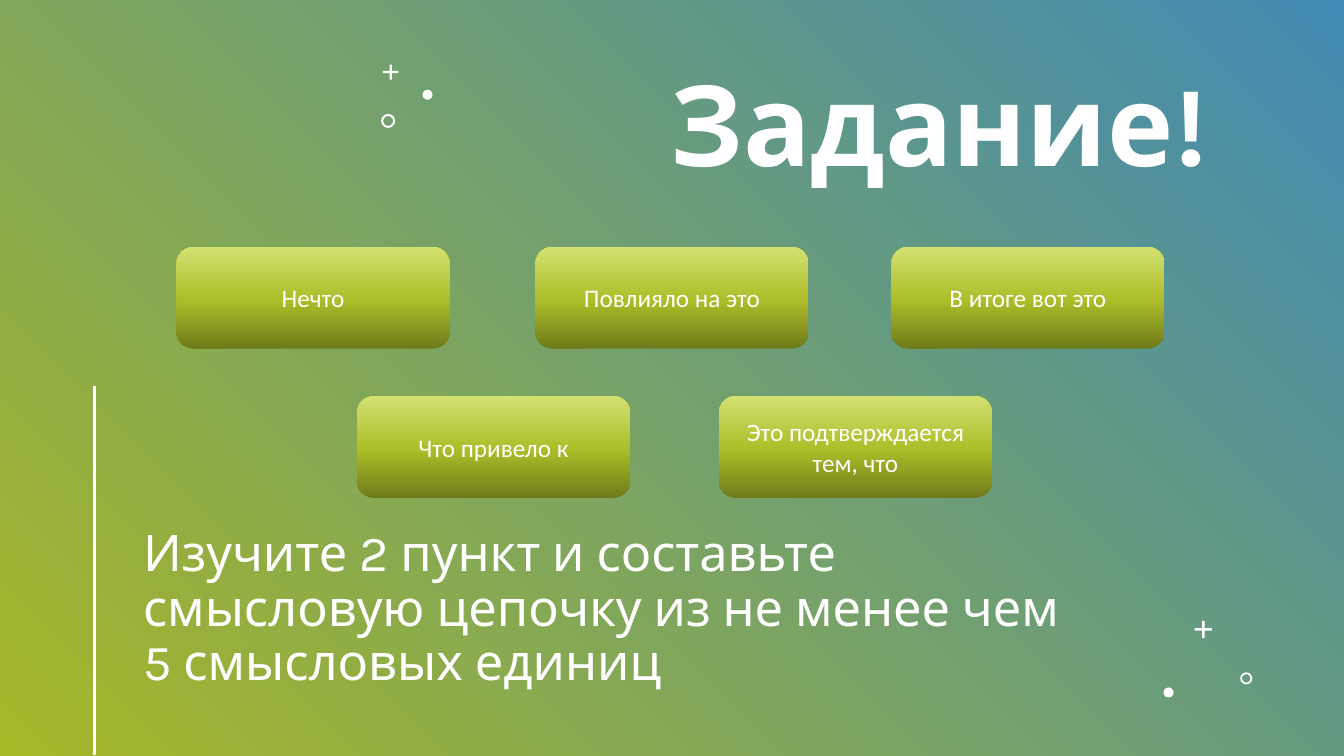
"""Builds the task slide with five linking phrases."""
from lxml.etree import SubElement
from pptx import Presentation
from pptx.dml.color import RGBColor
from pptx.enum.shapes import MSO_CONNECTOR, MSO_SHAPE
from pptx.enum.text import MSO_ANCHOR, MSO_AUTO_SIZE, PP_ALIGN
from pptx.oxml.ns import qn
from pptx.util import Inches, Pt

WHITE = "FFFFFF"
BACKDROP = [(0, "418AB3"), (100, "A6B727")]
BUTTON = [(0, "6F7B1A"), (48, "ACBE29"), (100, "D3E171")]


def color(value):
    """Turn a hex string into a colour."""
    return RGBColor.from_string(value)


class TaskSlide:
    """Holds the style and the current slide."""

    def __init__(self, prs):
        """Add a title-only slide."""
        self.s = prs.slides.add_slide(prs.slide_layouts[5])
        self.heading = {"name": "Karla", "size": Pt(80), "bold": True}
        self.body = {"name": "Karla", "size": Pt(36), "bold": False}
        self.label = {"name": "Calibri", "size": Pt(18), "bold": False}

    def fill_text(self, sp, text, font, align, anchor, spacing=None):
        """Put one formatted paragraph into a shape."""
        tf = sp.text_frame
        frame = {"word_wrap": True, "auto_size": MSO_AUTO_SIZE.NONE, "vertical_anchor": anchor}
        for key, value in frame.items():
            setattr(tf, key, value)
        p = tf.paragraphs[0]
        p.alignment, p.line_spacing = align, spacing
        r = p.add_run()
        r.text = text
        for key, value in font.items():
            setattr(r.font, key, value)
        r.font.color.rgb = color(WHITE)

    def title(self, text, *box):
        """Move and fill the title placeholder."""
        sp = self.s.shapes.title
        for key, value in zip(("left", "top", "width", "height"), box):
            setattr(sp, key, Inches(value))
        self.fill_text(sp, text, self.heading, PP_ALIGN.RIGHT, MSO_ANCHOR.TOP, 0.9)

    def text(self, text, *box):
        """Add a body text box."""
        sp = self.s.shapes.add_textbox(*map(Inches, box))
        self.fill_text(sp, text, self.body, PP_ALIGN.LEFT, MSO_ANCHOR.TOP, 0.9)

    def shape(self, kind, *box):
        """Add a preset shape without line or shadow."""
        sp = self.s.shapes.add_shape(kind, *map(Inches, box))
        sp.shadow.inherit = False
        sp.line.fill.background()
        return sp

    def gradient(self, sp, stops, angle):
        """Fill a shape with gradient stops at a clockwise angle."""
        sp.fill.gradient()
        sp.fill.gradient_angle = 360 - angle
        gs_list = sp._element.spPr.find(qn("a:gradFill")).find(qn("a:gsLst"))
        for gs in list(gs_list):
            gs_list.remove(gs)
        for position, value in stops:
            gs = SubElement(gs_list, qn("a:gs"), pos=str(position * 1000))
            SubElement(gs, qn("a:srgbClr"), val=value)

    def backdrop(self, width, height):
        """Cover the slide behind everything else."""
        sp = self.shape(MSO_SHAPE.RECTANGLE, 0, 0, width, height)
        self.gradient(sp, BACKDROP, 135)
        self.s.shapes._spTree.insert(2, sp._element)

    def button(self, text, left, top):
        """Add a phrase on a rounded button."""
        sp = self.shape(MSO_SHAPE.ROUNDED_RECTANGLE, left, top, 2.71, 1.01)
        self.gradient(sp, BUTTON, 270)
        self.fill_text(sp, text, self.label, PP_ALIGN.CENTER, MSO_ANCHOR.MIDDLE)

    def ornament(self, kind, left, top, size, adjustment=None):
        """Add a small white decoration."""
        sp = self.shape(kind, left, top, size, size)
        sp.fill.solid()
        sp.fill.fore_color.rgb = color(WHITE)
        if adjustment is not None:
            sp.adjustments[0] = adjustment

    def line(self, x, top, bottom):
        """Add a vertical white line."""
        ends = map(Inches, (x, top, x, bottom))
        c = self.s.shapes.add_connector(MSO_CONNECTOR.STRAIGHT, *ends)
        c.line.color.rgb = color(WHITE)
        c.line.width = Pt(2)
        SubElement(c._element.spPr, qn("a:effectLst"))


def main():
    """Build and save the slide."""
    prs = Presentation()
    prs.slide_width, prs.slide_height = Inches(13.33), Inches(7.5)
    slide = TaskSlide(prs)
    slide.backdrop(13.33, 7.5)
    slide.title("Задание!", 4.24, 0.64, 7.83, 4.55)
    slide.text("Изучите 2 пункт и составьте смысловую цепочку из не менее чем "
               "5 смысловых единиц", 1.32, 5.19, 9.38, 1.9)
    slide.line(0.94, 3.83, 7.49)
    for ornament in (
        (MSO_SHAPE.CROSS, 3.8, 0.64, 0.15, 0.43),
        (MSO_SHAPE.OVAL, 4.19, 0.89, 0.1),
        (MSO_SHAPE.DONUT, 3.78, 1.13, 0.14, 0.15),
        (MSO_SHAPE.CROSS, 11.85, 6.16, 0.17, 0.43),
        (MSO_SHAPE.DONUT, 12.3, 6.67, 0.12, 0.15),
        (MSO_SHAPE.OVAL, 11.54, 6.82, 0.1),
    ):
        slide.ornament(*ornament)
    rows = {
        2.45: {"Нечто": 1.75, "Повлияло на это": 5.31, "В итоге вот это": 8.84},
        3.93: {"Что привело к": 3.54, "Это подтверждается тем, что": 7.13},
    }
    for top, phrases in rows.items():
        for text, left in phrases.items():
            slide.button(text, left, top)
    prs.save("out.pptx")


if __name__ == "__main__":
    main()
